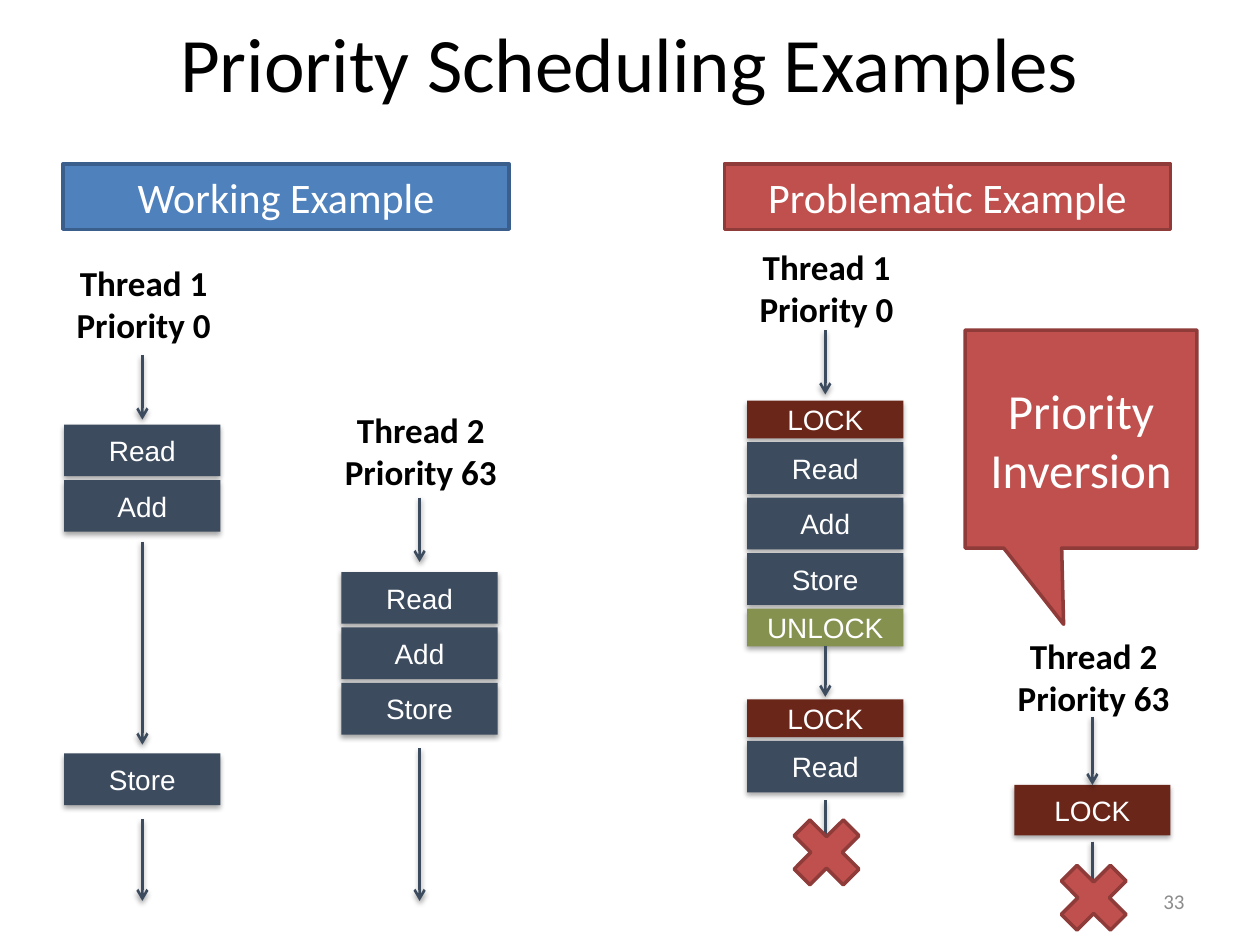
from lxml import etree
from pptx import Presentation
from pptx.dml.color import RGBColor
from pptx.enum.shapes import MSO_CONNECTOR, MSO_SHAPE
from pptx.enum.text import MSO_ANCHOR, PP_ALIGN
from pptx.oxml.ns import qn
from pptx.util import Inches, Pt

RECT, CROSS = MSO_SHAPE.RECTANGLE, MSO_SHAPE.MATH_MULTIPLY
CALLOUT = MSO_SHAPE.RECTANGULAR_CALLOUT
LINE = MSO_CONNECTOR.STRAIGHT
MID, TOP = MSO_ANCHOR.MIDDLE, MSO_ANCHOR.TOP
CENTER, RIGHT = PP_ALIGN.CENTER, PP_ALIGN.RIGHT

WIDE, HIGH = 10, 7.5
SLATE, MAROON, OLIVE = "3C4B5E", "6B261A", "85914E"
BLUE, NAVY, RED, BRICK = "4F81BD", "3A5F8C", "C0504D", "8E3B39"
BLACK, WHITE, GRAY = "000000", "FFFFFF", "8C8C8C"
BLOCK_W, GAP, CROSS_W = 1.24, 0.03, 0.75

# Step: text, fill, height
READ, ADD, STORE = [(word, SLATE, 0.41) for word in ("Read", "Add", "Store")]
LOCK, UNLOCK = ("LOCK", MAROON, 0.3), ("UNLOCK", OLIVE, 0.3)
TALL = ("LOCK", MAROON, 0.4)

TITLE = "Priority Scheduling Examples"
HEADS = [("Working Example", 0.5, BLUE, NAVY),
         ("Problematic Example", 5.75, RED, BRICK)]
LANES = [
    dict(mid=1.13, label=("Thread 1", "Priority 0"), top=2.03,
         stacks=[(3.37, [READ, ADD]), (5.98, [STORE])],
         arrows=[(2.82, 3.33), (4.3, 5.91), (6.5, 7.15)]),
    dict(mid=3.33, label=("Thread 2", "Priority 63"), top=3.19,
         stacks=[(4.54, [READ, ADD, STORE])],
         arrows=[(3.95, 4.46), (5.94, 7.15)]),
    dict(mid=6.55, label=("Thread 1", "Priority 0"), top=1.9,
         stacks=[(3.18, [LOCK, READ, ADD, STORE, UNLOCK]),
                 (5.55, [LOCK, READ])],
         arrows=[(2.62, 3.13), (5.12, 5.53), (6.35, 6.86)], cross=6.39),
    dict(mid=8.67, label=("Thread 2", "Priority 63"), top=4.99,
         stacks=[(6.23, [TALL])],
         arrows=[(5.69, 6.23), (6.68, 7.19)], cross=6.75),
]


def rgb(code):
    return RGBColor.from_string(code)


def write(frame, lines, size, color, font="Calibri", bold=False,
          align=CENTER, anchor=MID, wrap=True):
    frame.word_wrap = wrap
    frame.vertical_anchor = anchor
    for i, text in enumerate(lines):
        par = frame.add_paragraph() if i else frame.paragraphs[0]
        par.alignment = align
        run = par.add_run()
        run.text = text
        run.font.size, run.font.name, run.font.bold = Pt(size), font, bold
        run.font.color.rgb = rgb(color)


def shade(shape, alpha, dist):
    """Give the shape a soft shadow that falls straight down."""
    props = shape._element.spPr
    effects = props.find(qn("a:effectLst"))
    if effects is None:
        effects = etree.SubElement(props, qn("a:effectLst"))
    outer = etree.SubElement(effects, qn("a:outerShdw"), blurRad=str(Pt(3.1)),
                             dist=str(Pt(dist)), dir="5400000",
                             rotWithShape="0")
    tint = etree.SubElement(outer, qn("a:srgbClr"), val=BLACK)
    etree.SubElement(tint, qn("a:alpha"), val=str(alpha * 1000))


def add_box(shapes, kind, place, fill, edge=None):
    box = shapes.add_shape(kind, *map(Inches, place))
    box.shadow.inherit = False
    box.fill.solid()
    box.fill.fore_color.rgb = rgb(fill)
    if edge:
        box.line.color.rgb = rgb(edge)
        box.line.width = Pt(2)
    else:
        box.line.fill.background()
    return box


def add_text(shapes, place, lines, size, color, **style):
    box = shapes.add_textbox(*map(Inches, place))
    write(box.text_frame, lines, size, color, **style)


def add_arrow(shapes, mid, start, end, blocks):
    """Draw a downward arrow, joined to any block that it touches."""
    x, y, y2 = Inches(mid), Inches(start), Inches(end)
    arrow = shapes.add_connector(LINE, x, y, x, y2)
    near = Inches(0.015)
    for block in blocks:
        if abs(block.top + block.height - y) < near:
            arrow.begin_connect(block, 2)
        if abs(block.top - y2) < near:
            arrow.end_connect(block, 0)
    arrow.line.color.rgb = rgb(SLATE)
    arrow.line.width = Pt(1.5)
    etree.SubElement(arrow.line._get_or_add_ln(), qn("a:tailEnd"), type="arrow")
    shade(arrow, 38, 1.6)


def add_lane(shapes, lane):
    mid, blocks = lane["mid"], []
    for top, steps in lane["stacks"]:
        for text, fill, tall in steps:
            place = (mid - BLOCK_W / 2, top, BLOCK_W, tall)
            block = add_box(shapes, RECT, place, fill)
            shade(block, 35, 1.8)
            write(block.text_frame, [text], 16, WHITE, font="Arial")
            blocks.append(block)
            top += tall + GAP
    add_text(shapes, (mid - 0.7, lane["top"], 1.42, 0.77), lane["label"],
             20, BLACK, bold=True, anchor=TOP, wrap=False)
    for start, end in lane["arrows"]:
        add_arrow(shapes, mid, start, end, blocks)
    if "cross" in lane:
        place = (mid - CROSS_W / 2 + 0.01, lane["cross"], CROSS_W, CROSS_W)
        add_box(shapes, CROSS, place, RED, BRICK)


def main():
    deck = Presentation()
    deck.slide_width, deck.slide_height = Inches(WIDE), Inches(HIGH)
    shapes = deck.slides.add_slide(deck.slide_layouts[5]).shapes

    title = shapes.title
    title.left, title.top = Inches(0.5), Inches(0.04)
    title.width, title.height = Inches(WIDE - 1), Inches(0.9)
    write(title.text_frame, [TITLE], 44, BLACK)

    for text, left, fill, edge in HEADS:
        head = add_box(shapes, RECT, (left, 1.3, 3.54, 0.52), fill, edge)
        write(head.text_frame, [text], 24, WHITE)
    for lane in LANES:
        add_lane(shapes, lane)

    note = add_box(shapes, CALLOUT, (7.66, 2.62, 1.84, 1.73), RED, BRICK)
    note.adjustments[0], note.adjustments[1] = -0.075, 0.85
    write(note.text_frame, ["Priority Inversion"], 28, WHITE)

    add_text(shapes, (7.17, 6.95, 2.33, 0.4), ["33"], 12, GRAY, align=RIGHT)
    deck.save("out.pptx")


if __name__ == "__main__":
    main()
